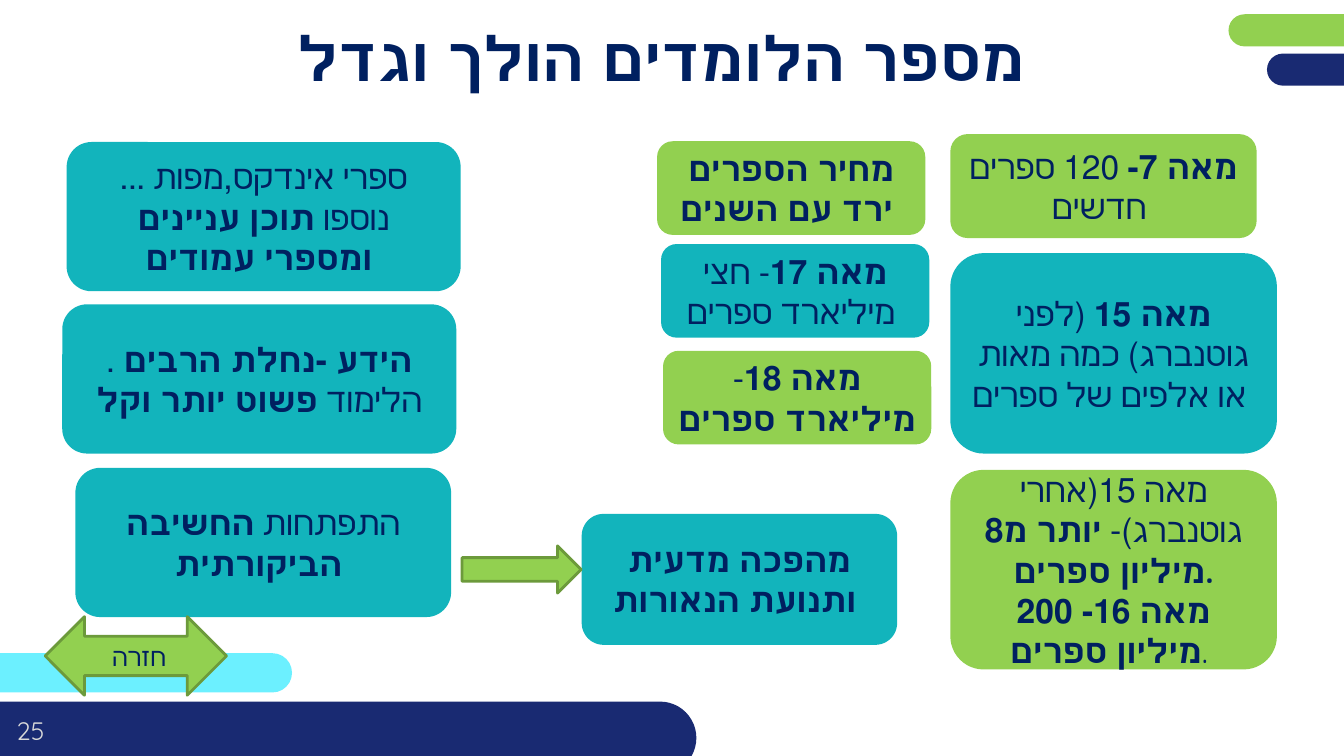
from pptx import Presentation
from pptx import util as u
from pptx.dml.color import RGBColor
from pptx.enum import shapes, text

NAVY, GREEN, TEAL, AQUA = "192A72", "92D050", "12B4BC", "6CF0FF"
INK, OUTLINE, PALE = "002060", "6C9A3B", "D9D9D9"
KINDS = shapes.MSO_SHAPE


def color(hex_value):
    return RGBColor.from_string(hex_value)


class SlideBuilder:
    font_name = "Quicksand"

    def __init__(self, slide):
        self.slide = slide

    def set_text(self, box, paragraphs, size, ink=INK, rtl=False):
        """Fill a box with centred paragraphs; text between asterisks is bold."""
        frame = box.text_frame
        frame.word_wrap = True
        frame.vertical_anchor = text.MSO_ANCHOR.MIDDLE
        for index, line in enumerate(paragraphs):
            para = frame.add_paragraph() if index else frame.paragraphs[0]
            para.alignment = text.PP_ALIGN.CENTER
            if rtl:
                para._p.get_or_add_pPr().set("rtl", "1")
            para.font.name = self.font_name
            para.font.size = u.Pt(size)
            para.font.color.rgb = color(ink)
            for part, words in enumerate(line.split("*")):
                if words:
                    span = para.add_run()
                    span.text = words
                    span.font.bold = part % 2 == 1

    def shape(self, kind, place, fill, outline=None):
        box = self.slide.shapes.add_shape(kind, *map(u.Cm, place))
        box.shadow.inherit = False
        box.fill.solid()
        box.fill.fore_color.rgb = color(fill)
        if outline:
            box.line.color.rgb = color(outline)
            box.line.width = u.Pt(2)
        else:
            box.line.fill.background()
        return box

    def bar(self, place, fill):
        """Draw a decorative bar with fully round ends."""
        self.shape(KINDS.ROUNDED_RECTANGLE, place, fill).adjustments[0] = 0.5

    def card(self, place, fill, *paragraphs):
        box = self.shape(KINDS.FLOWCHART_ALTERNATE_PROCESS, place, fill)
        self.set_text(box, paragraphs, 24)

    def label(self, place, words, size, ink=INK, rtl=False, inset=True):
        box = self.slide.shapes.add_textbox(*map(u.Cm, place))
        self.set_text(box, [words], size, ink, rtl)
        if not inset:
            frame = box.text_frame
            frame.margin_left = frame.margin_right = 0
            frame.margin_top = frame.margin_bottom = 0


def main():
    deck = Presentation()
    deck.slide_width, deck.slide_height = u.Cm(33.87), u.Cm(19.05)
    page = SlideBuilder(deck.slides.add_slide(deck.slide_layouts[6]))

    page.bar((31.93, 1.35, 4.37, 0.81), NAVY)
    page.bar((30.96, 0.36, 5.23, 0.81), GREEN)
    page.bar((-1.35, 16.46, 8.71, 0.99), AQUA)
    page.bar((-2.72, 17.68, 20.27, 1.83), NAVY)
    page.label((-0.36, 17.68, 2.26, 1.45), "25", 18, PALE)
    page.label((2.84, 0.43, 27.23, 2.01), "*מספר הלומדים הולך וגדל *", 44,
               rtl=True, inset=False)

    # Right column: books by century
    right = 23.95
    page.card((right, 3.38, 7.72, 2.62), GREEN, "*מאה 7-* 120 ספרים חדשים ")
    page.card((right, 6.38, 8.23, 5.05), TEAL,
              "*מאה 15* (לפני גוטנברג) כמה מאות או אלפים של ספרים ")
    page.card((right, 11.84, 8.23, 5.03), GREEN,
              "מאה 15(אחרי גוטנברג)- *יותר מ8 מיליון ספרים.*",
              "*מאה 16- 200 מיליון ספרים*. ")

    # Middle column: price and growth
    page.card((16.56, 3.56, 6.76, 2.36), GREEN, "*מחיר הספרים ירד עם השנים *")
    page.card((16.66, 6.15, 6.76, 2.36), TEAL, "*מאה 17*- חצי מיליארד ספרים ")
    page.card((16.71, 8.84, 6.76, 2.36), GREEN, "*מאה 18*- *מיליארד ספרים *")

    # Left column: consequences, leading to the scientific revolution
    page.card((1.68, 3.58, 9.93, 3.76), TEAL,
              "ספרי אינדקס,מפות ... נוספו *תוכן עניינים ומספרי עמודים *")
    page.card((1.57, 7.67, 9.93, 3.76), TEAL,
              "*הידע -נחלת הרבים *. הלימוד *פשוט יותר וקל*")
    page.card((1.9, 11.79, 9.47, 3.76), TEAL, "התפתחות *החשיבה הביקורתית *")
    page.card((14.66, 12.95, 7.95, 3.3), TEAL, "*מהפכה מדעית ותנועת הנאורות *")
    arrow = page.shape(KINDS.UP_ARROW, (12.55, 12.85, 1.19, 3.0), GREEN, OUTLINE)
    arrow.rotation = 90

    back = page.shape(KINDS.LEFT_RIGHT_ARROW, (1.14, 15.54, 4.57, 1.98),
                      GREEN, OUTLINE)
    page.set_text(back, ["חזרה "], 18, rtl=True)

    deck.save("out.pptx")


if __name__ == "__main__":
    main()
